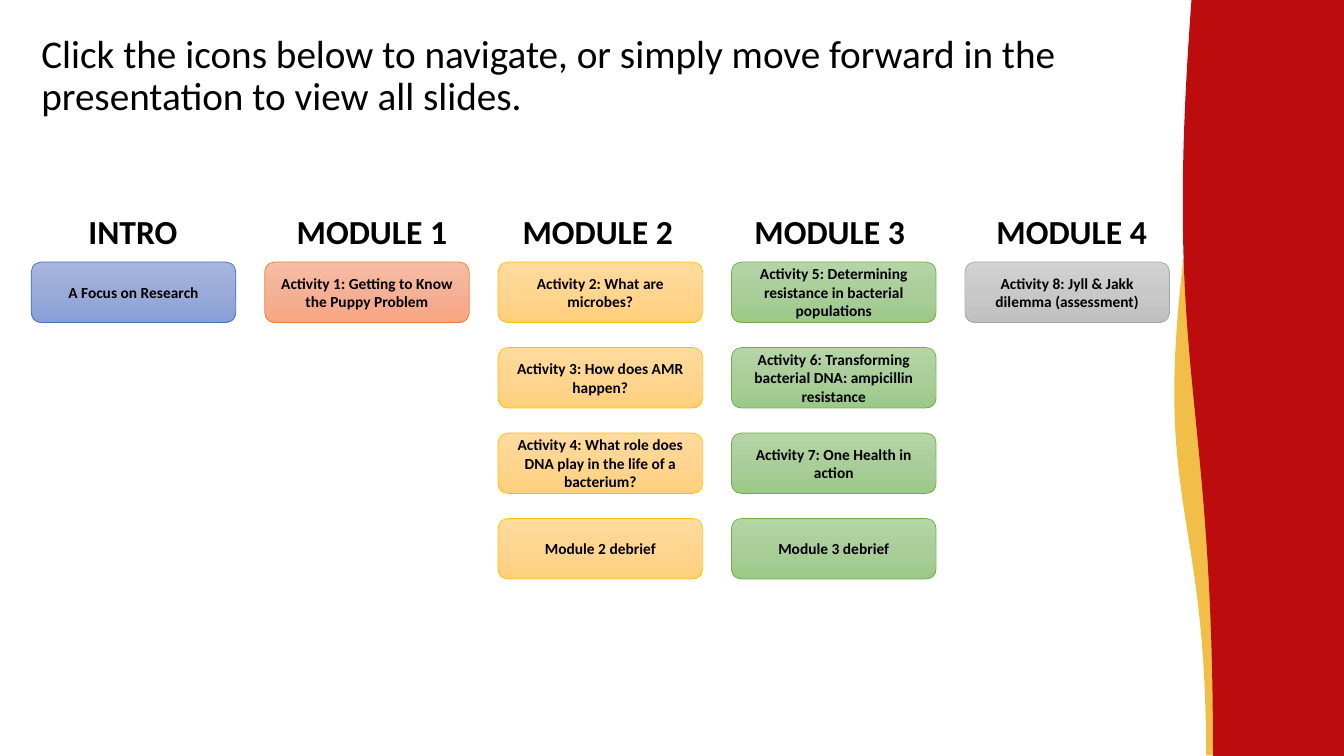
from copy import deepcopy
from dataclasses import dataclass

from lxml.etree import SubElement
from pptx import Presentation
from pptx.dml.color import RGBColor
from pptx.enum.shapes import MSO_SHAPE
from pptx.enum.text import MSO_ANCHOR, MSO_AUTO_SIZE, PP_ALIGN
from pptx.oxml.ns import qn
from pptx.shapes.autoshape import Shape
from pptx.slide import Slide
from pptx.text.text import _Paragraph
from pptx.util import Inches, Pt

# Grid of activity buttons, in inches
GRID_LEFT, GRID_TOP = 0.31, 2.6
COLUMN_STEP, ROW_STEP = 2.315, 0.848
BUTTON_WIDTH, BUTTON_HEIGHT = 2.03, 0.6
HEADINGS_LEFT, HEADINGS_INSET = 0.71, 0.1

COLORS = {"text": "000000", "gold": "F1BE48", "red": "BD0C0D"}
THEMES = {  # outline, then the gradient from top to bottom
    "blue": ("4472C4", "A8B7DF", "9AABD9", "889ED7"),
    "orange": ("ED7D31", "F7BDA5", "F5B196", "F8A582"),
    "yellow": ("FFC000", "FFDB9E", "FFD590", "FFD07C"),
    "green": ("70AD47", "B5D5A7", "AACE9A", "9CC987"),
    "gray": ("A5A5A5", "D2D2D2", "C8C8C8", "C0C0C0"),
}
TITLE_FONT = {"name": "Calibri", "size": Pt(28), "bold": False}
HEADING_FONT = {"name": "Calibri", "size": Pt(24), "bold": True}
BUTTON_FONT = {"name": "Calibri", "size": Pt(11), "bold": True}


@dataclass(frozen=True)
class Module:
    heading: str
    heading_center: float
    theme: str
    activities: tuple[str, ...]


@dataclass(frozen=True)
class Wave:
    left: float
    top: float
    width: float
    height: float
    color: str


MODULES = (
    Module("INTRO", 1.32, "blue", ("A Focus on Research",)),
    Module("MODULE 1", 3.69, "orange", ("Activity 1: Getting to Know the Puppy Problem",)),
    Module("MODULE 2", 5.93, "yellow", (
        "Activity 2: What are microbes?",
        "Activity 3: How does AMR happen?",
        "Activity 4: What role does DNA play in the life of a bacterium?",
        "Module 2 debrief",
    )),
    Module("MODULE 3", 8.23, "green", (
        "Activity 5: Determining resistance in bacterial populations",
        "Activity 6: Transforming bacterial DNA: ampicillin resistance",
        "Activity 7: One Health in action",
        "Module 3 debrief",
    )),
    Module("MODULE 4", 10.63, "gray", ("Activity 8: Jyll & Jakk dilemma (assessment)",)),
)
WAVES = (
    Wave(10.01, 4.18, 4.93, 1.7, "gold"),
    Wave(8.77, 2.94, 7.5, 1.62, "red"),
)


def set_values(target: object, values: dict) -> None:
    for name, value in values.items():
        setattr(target, name, value)


def write(para: _Paragraph, text: str, font: dict) -> None:
    span = para.add_run()
    span.text = text
    set_values(span.font, font)
    span.font.color.rgb = RGBColor.from_string(COLORS["text"])


def add_wave(page: Slide, wave: Wave) -> None:
    shape = page.shapes.add_shape(
        MSO_SHAPE.FLOWCHART_DOCUMENT,
        Inches(wave.left), Inches(wave.top), Inches(wave.width), Inches(wave.height))
    shape.rotation = 90
    shape.shadow.inherit = False
    shape.fill.solid()
    shape.fill.fore_color.rgb = RGBColor.from_string(COLORS[wave.color])
    shape.line.fill.background()


def add_title(page: Slide, text: str) -> None:
    title = page.shapes.title
    set_values(title, {"left": Inches(0.31), "top": Inches(0.29),
                       "width": Inches(11.3), "height": Inches(1.01)})
    set_values(title.text_frame, {"word_wrap": True, "auto_size": MSO_AUTO_SIZE.NONE,
                                  "vertical_anchor": MSO_ANCHOR.TOP})
    para = title.text_frame.paragraphs[0]
    set_values(para, {"alignment": PP_ALIGN.LEFT, "line_spacing": 0.9})
    write(para, text, TITLE_FONT)


def add_headings(page: Slide) -> None:
    box = page.shapes.add_textbox(
        Inches(HEADINGS_LEFT), Inches(2.04), Inches(10.89), Inches(0.5))
    set_values(box.text_frame, {"word_wrap": True,
                                "auto_size": MSO_AUTO_SIZE.SHAPE_TO_FIT_TEXT})
    para = box.text_frame.paragraphs[0]
    # One centred tab stop for each module
    tabs = SubElement(para._p.get_or_add_pPr(), qn("a:tabLst"))
    for module in MODULES:
        stop = module.heading_center - HEADINGS_LEFT - HEADINGS_INSET
        SubElement(tabs, qn("a:tab"), pos=str(Inches(stop)), algn="ctr")
    write(para, "".join("\t" + module.heading for module in MODULES), HEADING_FONT)


def paint_button(button: Shape, theme: str) -> None:
    outline, *shades = THEMES[theme]
    button.shadow.inherit = False
    button.line.color.rgb = RGBColor.from_string(outline)
    button.line.width = Pt(0.5)
    button.fill.gradient()
    button.fill.gradient_angle = 270
    # The default gradient has two stops: add the middle one
    stops = next(button._element.spPr.iter(qn("a:gsLst")))
    stops.insert(1, deepcopy(stops[0]))
    for index, (stop, shade) in enumerate(zip(button.fill.gradient_stops, shades)):
        stop.position = index / 2
        stop.color.rgb = RGBColor.from_string(shade)


def add_button(page: Slide, column: int, row: int, text: str, theme: str) -> None:
    button = page.shapes.add_shape(
        MSO_SHAPE.ROUNDED_RECTANGLE,
        Inches(GRID_LEFT + column * COLUMN_STEP), Inches(GRID_TOP + row * ROW_STEP),
        Inches(BUTTON_WIDTH), Inches(BUTTON_HEIGHT))
    paint_button(button, theme)
    set_values(button.text_frame, {"word_wrap": True, "vertical_anchor": MSO_ANCHOR.MIDDLE})
    para = button.text_frame.paragraphs[0]
    para.alignment = PP_ALIGN.CENTER
    write(para, text, BUTTON_FONT)


def main() -> None:
    deck = Presentation()
    set_values(deck, {"slide_width": Inches(13.33), "slide_height": Inches(7.5)})
    page = deck.slides.add_slide(deck.slide_layouts.get_by_name("Title Only"))

    # Waves along the right edge
    for wave in WAVES:
        add_wave(page, wave)

    # Title and module headings
    add_title(page, "Click the icons below to navigate, or simply move forward "
                    "in the presentation to view all slides.")
    add_headings(page)

    # Activities under each module
    for column, module in enumerate(MODULES):
        for row, activity in enumerate(module.activities):
            add_button(page, column, row, activity, module.theme)

    deck.save("out.pptx")


if __name__ == "__main__":
    main()
